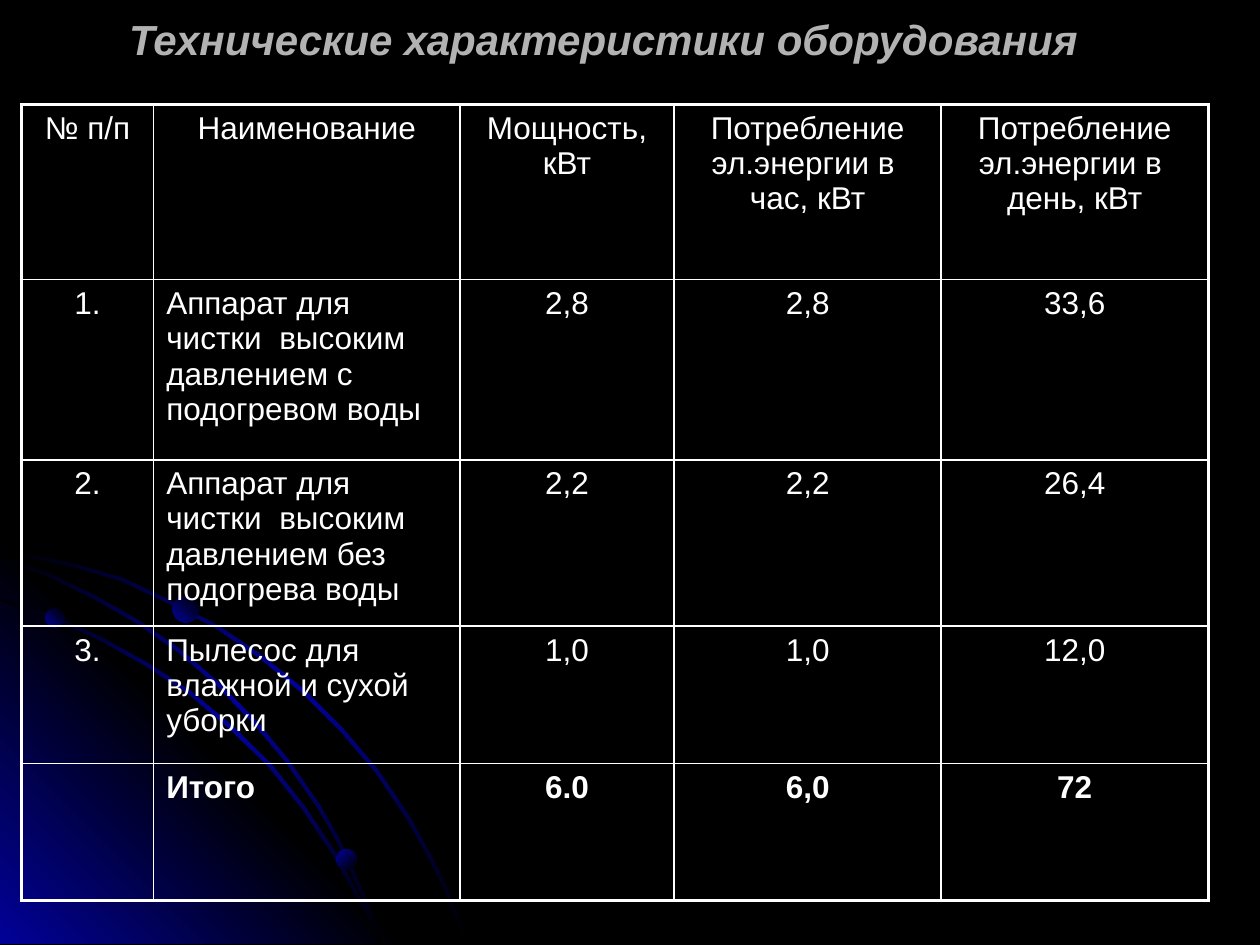
from dataclasses import dataclass

from lxml.etree import SubElement
from pptx import Presentation
from pptx.dml.color import RGBColor
from pptx.enum.shapes import MSO_SHAPE
from pptx.enum.text import MSO_ANCHOR, PP_ALIGN
from pptx.oxml.ns import qn
from pptx.shapes.autoshape import Shape
from pptx.slide import Slide
from pptx.table import _Cell
from pptx.text.text import _Paragraph
from pptx.util import Inches, Pt

# The slide is a grid of 1000 columns by 750 rows.
COLUMNS, ROWS = 1000, 750
UNIT = Inches(0.01)

BLACK = RGBColor(0x00, 0x00, 0x00)
BLUE = RGBColor(0x01, 0x01, 0x99)
WHITE = RGBColor(0xFF, 0xFF, 0xFF)
GREY = RGBColor(0xB2, 0xB2, 0xB2)

FONT = "Arial"
OUTER_BORDER, INNER_BORDER = Pt(2.25), Pt(1)
RIBBON_THICKNESS = 2

Point = tuple[int, int]


@dataclass(frozen=True)
class Gradient:
    colors: tuple[RGBColor, ...]
    angle: int  # counter-clockwise degrees


@dataclass(frozen=True)
class Ball:
    left: int
    top: int
    diameter: int
    angle: int


RIBBON_GRADIENT = Gradient((BLACK, BLUE, BLACK), 315)
CORNER_GRADIENT = Gradient((BLUE, BLACK, BLUE), 45)

LONG_ARC = [
    (0, 435), (28, 441), (57, 447), (98, 459), (136, 477), (174, 497),
    (209, 521), (242, 548), (272, 578), (300, 611), (325, 648), (339, 673),
    (352, 698), (362, 723), (372, 749),
]
LOWER_ARC = [
    (0, 475), (41, 488), (79, 505), (117, 526), (152, 549), (184, 576),
    (215, 606), (242, 640), (266, 676), (286, 712), (296, 730), (303, 749),
]
MIDDLE_ARC = [
    (0, 442), (39, 455), (76, 473), (111, 493), (144, 516), (175, 543),
    (204, 573), (229, 603), (254, 639), (269, 665), (282, 693), (294, 720),
    (303, 749),
]
CORNER = [(0, 427), (322, 749), (0, 749)]
BALLS = [Ball(36, 483, 15, 45), Ball(267, 674, 16, 315), Ball(137, 473, 21, 45)]

TABLE_LEFT, TABLE_TOP = 17, 83
COLUMN_WIDTHS = [105, 243, 170, 212, 212]
ROW_HEIGHTS = [139, 143, 132, 109, 109]
NAME_COLUMN = 1
EQUIPMENT = [
    ["№ п/п", "Наименование", "Мощность, кВт",
     "Потребление эл.энергии в  час, кВт", "Потребление эл.энергии в  день, кВт"],
    ["1.", "Аппарат для чистки  высоким давлением с подогревом воды",
     "2,8", "2,8", "33,6"],
    ["2.", "Аппарат для чистки  высоким давлением без подогрева воды",
     "2,2", "2,2", "26,4"],
    ["3.", "Пылесос для влажной и сухой уборки", "1,0", "1,0", "12,0"],
    ["", "Итого", "6.0", "6,0", "72"],
]


def paint(shape: Shape, gradient: Gradient) -> None:
    """Fill with evenly spaced gradient stops, without line or shadow."""
    shape.shadow.inherit = False
    shape.line.fill.background()
    shape.fill.gradient()
    shape.fill.gradient_angle = gradient.angle
    stops = shape._element.spPr.find(".//" + qn("a:gsLst"))
    stops.clear()
    for index, color in enumerate(gradient.colors):
        position = 100000 * index // (len(gradient.colors) - 1)
        stop = SubElement(stops, qn("a:gs"), pos=str(position))
        SubElement(stop, qn("a:srgbClr"), val=str(color))


def draw_outline(slide: Slide, points: list[Point], gradient: Gradient) -> None:
    builder = slide.shapes.build_freeform(*points[0], scale=UNIT)
    builder.add_line_segments(points[1:], close=True)
    paint(builder.convert_to_shape(), gradient)


def draw_ribbon(slide: Slide, arc: list[Point]) -> None:
    """Close an arc with its own copy moved down and left, kept on the slide."""
    inner = [
        (max(x - RIBBON_THICKNESS, 0), min(y + RIBBON_THICKNESS, ROWS - 1))
        for x, y in reversed(arc)
    ]
    draw_outline(slide, arc + inner, RIBBON_GRADIENT)


def draw_ball(slide: Slide, ball: Ball) -> None:
    shape = slide.shapes.add_shape(
        MSO_SHAPE.OVAL, ball.left * UNIT, ball.top * UNIT,
        ball.diameter * UNIT, ball.diameter * UNIT,
    )
    paint(shape, Gradient((BLUE, BLACK), ball.angle))


def add_text(paragraph: _Paragraph, text: str, size: int, color: RGBColor,
             bold: bool = False, italic: bool = False) -> None:
    run = paragraph.add_run()
    run.text = text
    run.font.name = FONT
    run.font.size = Pt(size)
    run.font.color.rgb = color
    run.font.bold = bold
    run.font.italic = italic


def draw_title(slide: Slide) -> None:
    box = slide.shapes.add_textbox(50 * UNIT, 0, 858 * UNIT, 61 * UNIT)
    frame = box.text_frame
    frame.word_wrap = True
    frame.vertical_anchor = MSO_ANCHOR.MIDDLE
    paragraph = frame.paragraphs[0]
    paragraph.alignment = PP_ALIGN.CENTER
    add_text(paragraph, "Технические характеристики оборудования", 24, GREY,
             bold=True, italic=True)


def set_borders(cell: _Cell, row: int, column: int) -> None:
    """Give the edges of the whole table a thicker line than the inner ones."""
    is_outer = {
        "a:lnL": column == 0,
        "a:lnR": column == len(COLUMN_WIDTHS) - 1,
        "a:lnT": row == 0,
        "a:lnB": row == len(ROW_HEIGHTS) - 1,
    }
    properties = cell._tc.get_or_add_tcPr()
    for tag, outer in is_outer.items():
        width = OUTER_BORDER if outer else INNER_BORDER
        line = SubElement(properties, qn(tag), w=str(int(width)))
        fill = SubElement(line, qn("a:solidFill"))
        SubElement(fill, qn("a:srgbClr"), val=str(WHITE))


def draw_table(slide: Slide) -> None:
    table = slide.shapes.add_table(
        len(ROW_HEIGHTS), len(COLUMN_WIDTHS), TABLE_LEFT * UNIT, TABLE_TOP * UNIT,
        sum(COLUMN_WIDTHS) * UNIT, sum(ROW_HEIGHTS) * UNIT,
    ).table
    table.first_row = False
    table.horz_banding = False
    for column, width in zip(table.columns, COLUMN_WIDTHS):
        column.width = width * UNIT
    for row, height in zip(table.rows, ROW_HEIGHTS):
        row.height = height * UNIT
    for row, texts in enumerate(EQUIPMENT):
        is_total = row == len(EQUIPMENT) - 1
        for column, text in enumerate(texts):
            cell = table.cell(row, column)
            set_borders(cell, row, column)
            cell.fill.background()
            if not text:
                continue
            paragraph = cell.text_frame.paragraphs[0]
            is_name = column == NAME_COLUMN and row > 0
            paragraph.alignment = PP_ALIGN.LEFT if is_name else PP_ALIGN.CENTER
            add_text(paragraph, text, 18, WHITE, bold=is_total)


def main() -> None:
    presentation = Presentation()
    presentation.slide_width = COLUMNS * UNIT
    presentation.slide_height = ROWS * UNIT
    slide = presentation.slides.add_slide(presentation.slide_layouts[6])
    slide.background.fill.solid()
    slide.background.fill.fore_color.rgb = BLACK

    draw_ribbon(slide, LONG_ARC)
    draw_outline(slide, CORNER, CORNER_GRADIENT)
    for arc in (LOWER_ARC, MIDDLE_ARC):
        draw_ribbon(slide, arc)
    for ball in BALLS:
        draw_ball(slide, ball)
    draw_title(slide)
    draw_table(slide)
    presentation.save("out.pptx")


if __name__ == "__main__":
    main()
